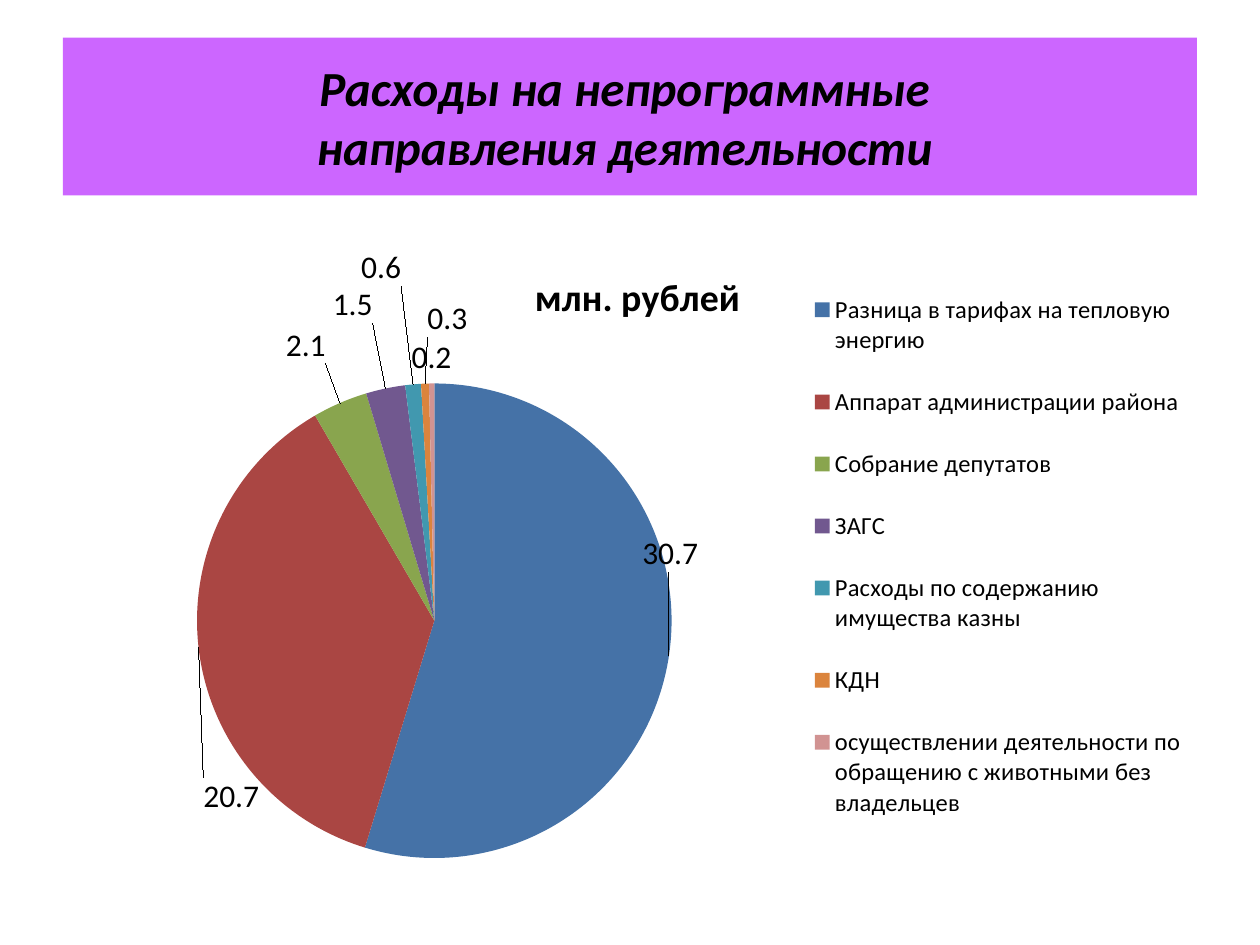
from dataclasses import dataclass

from pptx import Presentation
from pptx.chart.data import CategoryChartData
from pptx.dml.color import RGBColor
from pptx.enum.chart import XL_CHART_TYPE, XL_LEGEND_POSITION
from pptx.enum.shapes import MSO_SHAPE
from pptx.enum.text import MSO_ANCHOR, PP_ALIGN
from pptx.oxml import parse_xml
from pptx.oxml.ns import nsdecls, qn
from pptx.util import Cm, Pt

PIE = XL_CHART_TYPE.PIE
RIGHT = XL_LEGEND_POSITION.RIGHT
RECTANGLE = MSO_SHAPE.RECTANGLE
MIDDLE = MSO_ANCHOR.MIDDLE
CENTER = PP_ALIGN.CENTER


@dataclass(frozen=True)
class Theme:
    font: str = "Calibri"
    text: str = "000000"
    banner: str = "CC66FF"
    heading_size: float = 28
    chart_title_size: float = 21.6
    label_size: float = 18
    legend_size: float = 14


# Category, value, slice colour, label shift as a share of the chart size
EXPENSES = [
    ("Разница в тарифах на тепловую энергию", 30.7, "4572A7", (-0.03, -0.19)),
    ("Аппарат администрации района", 20.7, "AA4643", (0.06, 0.2)),
    ("Собрание депутатов", 2.1, "89A54E", (-0.01, -0.05)),
    ("ЗАГС", 1.5, "71588F", (-0.01, -0.09)),
    ("Расходы по содержанию имущества казны", 0.6, "4198AF", (-0.01, -0.14)),
    ("КДН", 0.3, "DB843D", (0.02, -0.06)),
    ("", None, None, None),
    ("осуществлении деятельности по обращению с животными без владельцев",
     0.2, "D19392", None),
]
SHOW_VALUE = "".join(
    f'<c:show{part} val="{int(part == "Val")}"/>'
    for part in ("LegendKey", "Val", "CatName", "SerName", "Percent", "BubbleSize")
)


def format_font(font, theme, size, bold=False, italic=False):
    font.name, font.size = theme.font, Pt(size)
    font.bold, font.italic = bold, italic
    font.color.rgb = RGBColor.from_string(theme.text)


def write_text(frame, text, theme, size, align=CENTER, **style):
    """Fill a frame with one paragraph, breaking lines at newlines."""
    para = frame.paragraphs[0]
    para.alignment = align
    for number, line in enumerate(text.split("\n")):
        if number:
            para.add_line_break()
        span = para.add_run()
        span.text = line
        format_font(span.font, theme, size, **style)


def layout_xml(x, y, width=None, height=None, mode="edge", target=""):
    modes = f'<c:xMode val="{mode}"/><c:yMode val="{mode}"/>' if mode else ""
    sizes = f'<c:w val="{width}"/><c:h val="{height}"/>' if width else ""
    inner = f'<c:layoutTarget val="{target}"/>' if target else ""
    return (f'<c:layout {nsdecls("c")}><c:manualLayout>{inner}{modes}'
            f'<c:x val="{x}"/><c:y val="{y}"/>{sizes}</c:manualLayout></c:layout>')


def place(parent, successor, *bounds, **options):
    """Give a chart part a manual layout, put just before its successor."""
    for old in parent.findall(qn("c:layout")):
        parent.remove(old)
    parent.find(qn(successor)).addprevious(parse_xml(layout_xml(*bounds, **options)))


def labels_xml(shifts, empty):
    """Value labels with leader lines, moved by the given shifts."""
    labels = ""
    for index, shift in enumerate(shifts):
        if index in empty:
            labels += f'<c:dLbl><c:idx val="{index}"/><c:delete val="1"/></c:dLbl>'
        elif shift:
            labels += (f'<c:dLbl><c:idx val="{index}"/>{layout_xml(*shift, mode="")}'
                       f'<c:dLblPos val="outEnd"/>{SHOW_VALUE}</c:dLbl>')
    return (f'<c:dLbls {nsdecls("c", "a")}>{labels}<c:dLblPos val="outEnd"/>{SHOW_VALUE}'
            '<c:showLeaderLines val="1"/><c:leaderLines/></c:dLbls>')


class SlideBuilder:
    def __init__(self, slide, theme):
        self.slide = slide
        self.theme = theme

    def banner(self, text, left, top, width, height):
        box = self.slide.shapes.add_shape(
            RECTANGLE, Cm(left), Cm(top), Cm(width), Cm(height))
        box.shadow.inherit = False
        box.fill.solid()
        box.fill.fore_color.rgb = RGBColor.from_string(self.theme.banner)
        box.line.fill.background()
        box.text_frame.word_wrap = True
        box.text_frame.vertical_anchor = MIDDLE
        write_text(box.text_frame, text, self.theme, self.theme.heading_size,
                   bold=True, italic=True)

    def pie(self, title, rows, left, top, width, height):
        names, values, colors, shifts = zip(*rows)
        empty = [index for index, value in enumerate(values) if value is None]
        data = CategoryChartData()
        data.categories = names
        data.add_series(title, values)
        chart = self.slide.shapes.add_chart(
            PIE, Cm(left), Cm(top), Cm(width), Cm(height), data).chart
        format_font(chart.font, self.theme, self.theme.label_size)

        chart.has_title = True
        write_text(chart.chart_title.text_frame, title, self.theme,
                   self.theme.chart_title_size, bold=True)
        place(chart.chart_title._element, "c:overlay", 0.41, 0.05)

        plot = chart.plots[0]
        plot.vary_by_categories = True
        pie = plot._element
        place(pie.getparent(), "c:pieChart", 0.118, 0.237, 0.419, 0.736, target="inner")
        series = plot.series[0]
        for index, color in enumerate(colors):
            if color:
                fill = series.points[index].format.fill
                fill.solid()
                fill.fore_color.rgb = RGBColor.from_string(color)
        labels = parse_xml(labels_xml(shifts, empty))
        series._element.find(qn("c:cat")).addprevious(labels)
        self.legend(chart, empty)

    def legend(self, chart, hidden):
        chart.has_legend = True
        legend = chart.legend
        legend.position = RIGHT
        legend.include_in_layout = False
        format_font(legend.font, self.theme, self.theme.legend_size)
        element = legend._element
        place(element, "c:overlay", 0.657, 0.05, 0.335, 0.91)
        for index in hidden:
            element.find(qn("c:layout")).addprevious(parse_xml(
                f'<c:legendEntry {nsdecls("c")}><c:idx val="{index}"/>'
                '<c:delete val="1"/></c:legendEntry>'))


def main():
    deck = Presentation()
    deck.slide_width, deck.slide_height = Cm(25.4), Cm(19.05)
    page = SlideBuilder(deck.slides.add_slide(deck.slide_layouts[6]), Theme())
    page.banner("Расходы на непрограммные \nнаправления деятельности ",
                1.27, 0.76, 22.86, 3.18)
    page.pie("млн. рублей", EXPENSES, 1.27, 4.65, 22.86, 13)
    deck.save("out.pptx")


if __name__ == "__main__":
    main()
